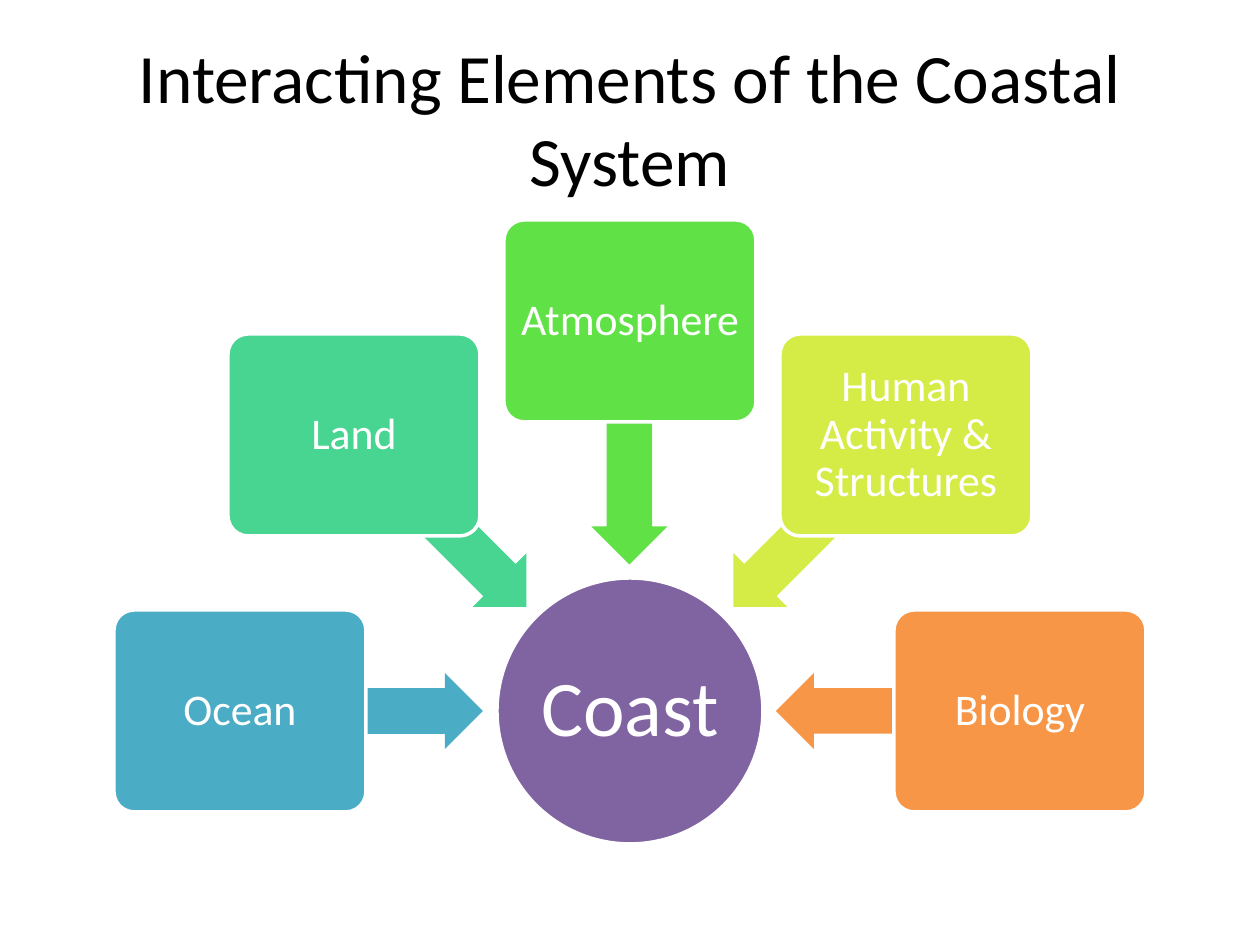
from math import cos, radians, sin

from pptx import Presentation
from pptx.dml.color import RGBColor
from pptx.enum.shapes import MSO_SHAPE
from pptx.enum.text import MSO_ANCHOR, MSO_AUTO_SIZE, PP_ALIGN
from pptx.util import Pt

PX = 914400 // 126  # EMU in one px
FONT = "Calibri"
BLACK = RGBColor(0x00, 0x00, 0x00)
WHITE = RGBColor(0xFF, 0xFF, 0xFF)
PURPLE = RGBColor(0x80, 0x64, 0xA2)
BLUE = RGBColor(0x4B, 0xAC, 0xC6)
TEAL = RGBColor(0x48, 0xD4, 0x91)
GREEN = RGBColor(0x60, 0xE1, 0x46)
LIME = RGBColor(0xD5, 0xEC, 0x46)
ORANGE = RGBColor(0xF7, 0x96, 0x46)

# Radial layout, in px
HUB_X, HUB_Y, HUB_SIZE = 630, 711, 266
BOX_W, BOX_H, BOX_ORBIT = 252, 202, 390
ARROW_W, ARROW_H, ARROW_ORBIT = 243, 76, 268

ITEMS = [
    ("Ocean", BLUE),
    ("Land", TEAL),
    ("Atmosphere", GREEN),
    ("Human Activity &\nStructures", LIME),
    ("Biology", ORANGE),
]


def set_text(shape, text, size, color, inset, spacing=1.0):
    frame = shape.text_frame
    frame.word_wrap = True
    frame.auto_size = MSO_AUTO_SIZE.NONE
    frame.vertical_anchor = MSO_ANCHOR.MIDDLE
    frame.margin_left = frame.margin_right = inset * PX
    frame.margin_top = frame.margin_bottom = inset * PX
    para = frame.paragraphs[0]
    para.text = text
    para.alignment = PP_ALIGN.CENTER
    para.line_spacing = spacing
    for run in para.runs:
        run.font.name = FONT
        run.font.size = Pt(size)
        run.font.color.rgb = color


def add_form(slide, kind, angle, orbit, width, height, color):
    """Add a filled shape centred on an orbit around the hub."""
    mid_x = HUB_X + orbit * cos(radians(angle))
    mid_y = HUB_Y + orbit * sin(radians(angle))
    left, top = round(mid_x - width / 2), round(mid_y - height / 2)
    shape = slide.shapes.add_shape(
        kind, left * PX, top * PX, width * PX, height * PX)
    shape.shadow.inherit = False
    shape.fill.solid()
    shape.fill.fore_color.rgb = color
    return shape


def add_edge(shape):
    shape.line.color.rgb = WHITE
    shape.line.width = Pt(2)


def add_title(slide, text):
    title = slide.shapes.title
    title.left, title.top = 63 * PX, 38 * PX
    title.width, title.height = 1134 * PX, 158 * PX
    set_text(title, text, 39.6, BLACK, 6)


def add_hub(slide, text):
    hub = add_form(slide, MSO_SHAPE.OVAL, 0, 0, HUB_SIZE, HUB_SIZE, PURPLE)
    add_edge(hub)
    set_text(hub, text, 45, WHITE, 0, 0.9)


def add_arrow(slide, angle, color):
    arrow = add_form(slide, MSO_SHAPE.LEFT_ARROW, angle, ARROW_ORBIT,
                     ARROW_W, ARROW_H, color)
    arrow.adjustments[0] = 0.6
    arrow.adjustments[1] = 0.5
    arrow.rotation = angle % 360
    arrow.line.fill.background()


def add_box(slide, angle, text, color):
    box = add_form(slide, MSO_SHAPE.ROUNDED_RECTANGLE, angle, BOX_ORBIT,
                   BOX_W, BOX_H, color)
    box.adjustments[0] = 0.1
    add_edge(box)
    set_text(box, text, 25, WHITE, 6, 0.9)


def main():
    deck = Presentation()
    deck.slide_width, deck.slide_height = 1260 * PX, 945 * PX
    slide = deck.slides.add_slide(deck.slide_layouts[5])

    add_title(slide, "Interacting Elements of the Coastal System")
    add_hub(slide, "Coast")

    # Elements fan over the hub from left to right
    step = 180 / (len(ITEMS) - 1)
    for index, (text, color) in enumerate(ITEMS):
        angle = 180 + index * step
        add_arrow(slide, angle, color)
        add_box(slide, angle, text, color)

    deck.save("out.pptx")


if __name__ == "__main__":
    main()
